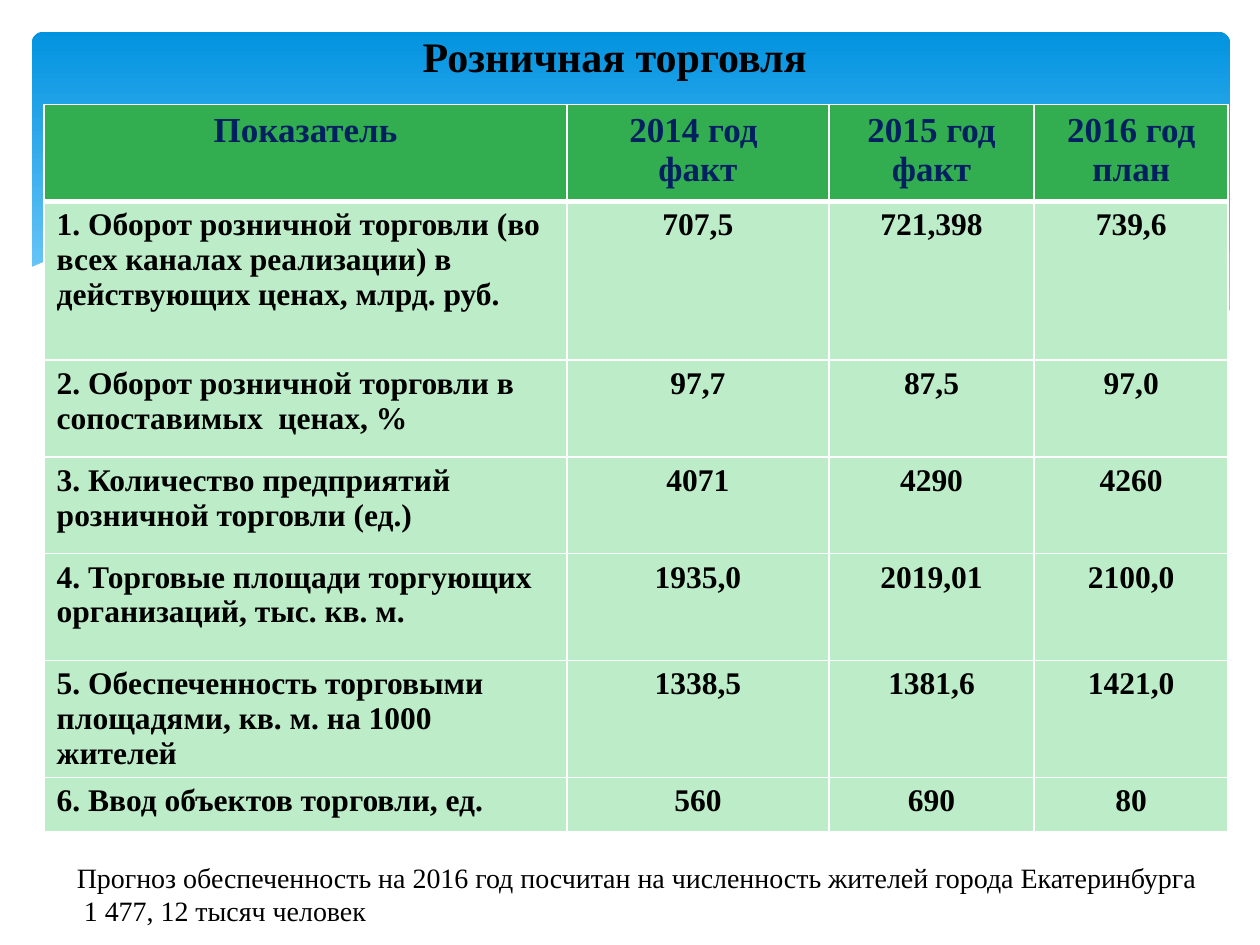
import pptx
import pptx.dml.color
import pptx.enum.shapes
import pptx.enum.text
import pptx.oxml
import pptx.oxml.ns
import pptx.util

Cm = pptx.util.Cm
Pt = pptx.util.Pt
ALIGN = pptx.enum.text.PP_ALIGN
ANCHOR = pptx.enum.text.MSO_ANCHOR

COLORS = {
    "sky": "0293E0",
    "pale sky": "83D3FE",
    "haze": "C6E7FC",
    "white": "FFFFFF",
    "black": "000000",
    "navy": "002060",
    "green": "32AE51",
    "mint": "BDECC9",
}

# Wave outlines, in centimetres
RIGHT_HAZE = [
    (24.79, 5.08), (23.75, 5.26), (21.87, 5.66), (19.79, 6.15), (17.93, 6.53),
    (16.79, 6.73), (17.91, 6.88), (19.23, 7.01), (20.68, 7.06), (21.92, 6.98),
    (22.99, 6.83), (23.93, 6.58), (24.79, 6.27)]
MIDDLE_HAZE = [
    (22.68, 6.93), (20.5, 6.6), (17.93, 6.1), (15.98, 5.64), (14.45, 5.28),
    (13.06, 5.03), (11.23, 4.8), (9.65, 4.7), (8.33, 4.75), (7.26, 4.85),
    (9.19, 5.16), (11.4, 5.64), (13.46, 6.1), (15.27, 6.48), (17.27, 6.81),
    (19, 7.01), (20.78, 7.06)]
LONG_CREST = [
    (7.85, 4.95), (8.74, 4.83), (10.19, 4.75), (11.91, 4.8), (13.54, 4.93),
    (15.44, 5.18), (17.65, 5.56), (20.19, 6.12), (23.04, 6.91)]
RIGHT_CREST = [
    (15.57, 6.53), (17.65, 5.97), (19.71, 5.49), (22, 5.05), (23.47, 4.83),
    (24.77, 4.7)]
WHITE_WAVE = [
    (24.82, 6.25), (23.62, 6.65), (22.23, 6.93), (20.55, 7.04), (18.44, 6.91),
    (15.9, 6.55), (13.44, 6.07), (11.35, 5.59), (9.27, 5.13), (7.42, 4.83),
    (5.84, 4.7), (4.5, 4.67), (3.02, 4.75), (1.93, 4.95), (1.17, 5.16),
    (0.58, 5.41), (0.58, 8.36), (24.82, 8.36)]

COLUMN_WIDTHS = [10.54, 5.28, 4.14, 3.91]
ROW_HEIGHTS = [1.95, 3.2, 1.95, 1.95, 2.15, 2.36, 1.1]
TRADE_ROWS = [
    ["Показатель", "2014 год \nфакт", "2015 год\nфакт", "2016 год план"],
    ["1. Оборот розничной торговли (во всех каналах реализации) в "
     "действующих ценах, млрд. руб.", "707,5", "721,398", "739,6"],
    ["2. Оборот розничной торговли в сопоставимых  ценах, %",
     "97,7", "87,5", "97,0"],
    ["3. Количество предприятий розничной торговли (ед.)",
     "4071", "4290", "4260"],
    ["4. Торговые площади торгующих организаций, тыс. кв. м.",
     "1935,0", "2019,01", "2100,0"],
    ["5. Обеспеченность торговыми площадями, кв. м. на 1000 жителей",
     "1338,5", "1381,6", "1421,0"],
    ["6. Ввод объектов торговли, ед.", "560", "690", "80"],
]


def rgb(name):
    return pptx.dml.color.RGBColor.from_string(COLORS[name])


class SlideBuilder:
    """Holds the text style and the current slide."""

    font_name = "Times New Roman"

    def __init__(self, slide):
        self.slide = slide
        self.shapes = slide.shapes

    def set_text(self, frame, text, color, align, **font_format):
        frame.text = text
        for paragraph in frame.paragraphs:
            paragraph.alignment = align
            for key, value in {"name": self.font_name, **font_format}.items():
                setattr(paragraph.font, key, value)
            paragraph.font.color.rgb = rgb(color)

    def text(self, box, text, align, frame_format, **font_format):
        frame = self.shapes.add_textbox(*map(Cm, box)).text_frame
        for key, value in frame_format.items():
            setattr(frame, key, value)
        self.set_text(frame, text, "black", align, **font_format)

    def gradient_panel(self, box, corner, stops):
        panel = self.shapes.add_shape(
            pptx.enum.shapes.MSO_SHAPE.ROUNDED_RECTANGLE, *map(Cm, box))
        panel.adjustments[0] = corner
        panel.shadow.inherit = False
        panel.line.fill.background()
        panel.fill.gradient()
        panel.fill.gradient_angle = 270
        for stop, (position, color) in zip(panel.fill.gradient_stops, stops):
            stop.position = position
            stop.color.rgb = rgb(color)

    def outline(self, points, closed):
        start, *rest = [(Cm(x), Cm(y)) for x, y in points]
        builder = self.shapes.build_freeform(*start)
        builder.add_line_segments(rest, close=closed)
        shape = builder.convert_to_shape()
        shape.shadow.inherit = False
        return shape

    def wave(self, points, color, opacity=100):
        wave = self.outline(points, closed=True)
        wave.line.fill.background()
        wave.fill.solid()
        wave.fill.fore_color.rgb = rgb(color)
        if opacity < 100:
            tint = wave.element.find(".//" + pptx.oxml.ns.qn("a:srgbClr"))
            tint.append(pptx.oxml.parse_xml(
                f'<a:alpha {pptx.oxml.ns.nsdecls("a")} val="{opacity * 1000}"/>'))

    def crest(self, points):
        crest = self.outline(points, closed=False)
        crest.fill.background()
        crest.line.color.rgb = rgb("white")
        crest.line.width = Pt(0)

    def borders(self, cell, widths):
        properties = cell._tc.get_or_add_tcPr()
        for side, width in widths.items():
            properties.append(pptx.oxml.parse_xml(
                f'<a:ln{side} {pptx.oxml.ns.nsdecls("a")} w="{Pt(width)}">'
                f'<a:solidFill><a:srgbClr val="{COLORS["white"]}"/></a:solidFill>'
                f'</a:ln{side}>'))

    def table(self, left, top, rows, widths, heights):
        table = self.shapes.add_table(
            len(rows), len(widths), Cm(left), Cm(top),
            Cm(sum(widths)), Cm(sum(heights))).table
        table.horz_banding = False
        for column, width in zip(table.columns, widths):
            column.width = Cm(width)
        for row, height in zip(table.rows, heights):
            row.height = Cm(height)
        for r, row in enumerate(rows):
            header = r == 0
            for c, text in enumerate(row):
                cell = table.cell(r, c)
                self.borders(cell, {"L": 1, "R": 1, "T": 3 if r == 1 else 1,
                                    "B": 3 if header else 1})
                cell.fill.solid()
                cell.fill.fore_color.rgb = rgb("green" if header else "mint")
                self.set_text(cell.text_frame, text,
                              "navy" if header else "black",
                              ALIGN.CENTER if header or c else ALIGN.LEFT,
                              size=Pt(20 if header else 18), bold=True)


def main():
    deck = pptx.Presentation()
    deck.slide_width, deck.slide_height = Cm(25.4), Cm(19.05)
    page = SlideBuilder(deck.slides.add_slide(deck.slide_layouts[6]))

    # Blue header with waves
    page.gradient_panel((0.64, 0.64, 24.16, 6.86), 0.034,
                        [(0, "sky"), (0.9, "pale sky")])
    page.wave(RIGHT_HAZE, "haze", 29)
    page.wave(MIDDLE_HAZE, "haze", 40)
    page.crest(LONG_CREST)
    page.crest(RIGHT_CREST)
    page.wave(WHITE_WAVE, "white")

    # Retail trade figures
    page.table(0.89, 2.11, TRADE_ROWS, COLUMN_WIDTHS, ROW_HEIGHTS)

    # Title and footnote
    page.text((0.64, 0.33, 23.5, 1.57), "Розничная торговля", ALIGN.CENTER,
              {"word_wrap": True, "vertical_anchor": ANCHOR.MIDDLE},
              size=Pt(24), bold=True)
    page.text((1.3, 17.22, 23.27, 1.63),
              "Прогноз обеспеченность на 2016 год посчитан на численность "
              "жителей города Екатеринбурга\n 1 477, 12 тысяч человек",
              ALIGN.LEFT, {"word_wrap": False}, size=Pt(16))

    deck.save("out.pptx")


if __name__ == "__main__":
    main()
